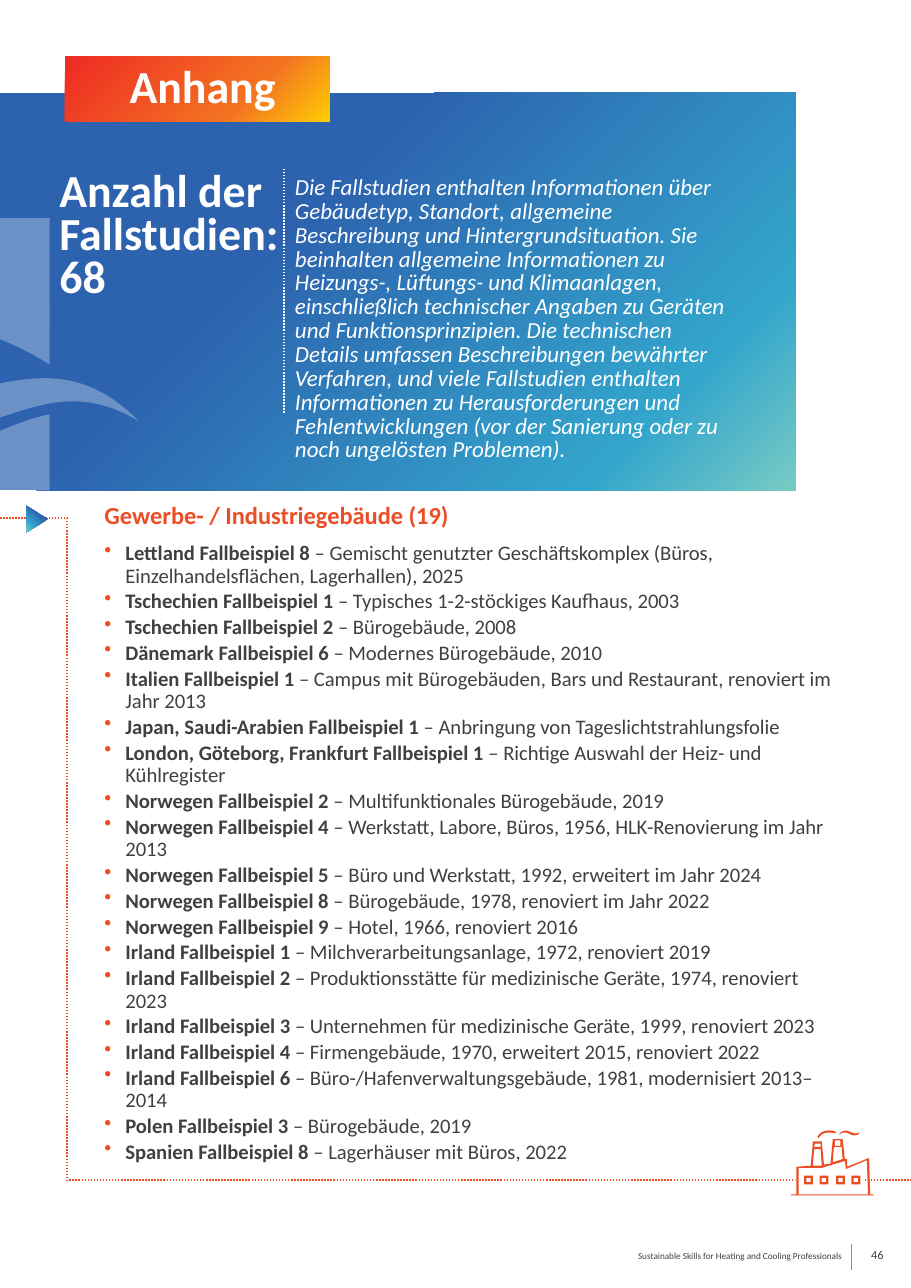
from lxml import etree
from pptx import Presentation
from pptx import util as u
from pptx.dml.color import RGBColor
from pptx.enum import dml, shapes, text
from pptx.oxml import ns, parse_xml

PX = 9144
WHITE = RGBColor(0xFF, 0xFF, 0xFF)
GREY = RGBColor(0x40, 0x40, 0x40)
RED = RGBColor(0xED, 0x4D, 0x24)
ORANGE = RGBColor(0xF3, 0x73, 0x21)
BLUES = [(35, RGBColor(0x2D, 0x62, 0xAE)), (82, RGBColor(0x33, 0xA5, 0xCC)),
         (100, RGBColor(0x77, 0xCB, 0xC4))]
ARROW_BLUES = [BLUES[0], (74, BLUES[1][1]), BLUES[2]]
FLAMES = [(3, RGBColor(0xEE, 0x2D, 0x24)), (68, ORANGE), (100, RGBColor(0xFF, 0xCD, 0x05))]

INTRO = ("Die Fallstudien enthalten Informationen über Gebäudetyp, Standort, allgemeine "
         "Beschreibung und Hintergrundsituation. Sie beinhalten allgemeine Informationen zu "
         "Heizungs-, Lüftungs- und Klimaanlagen, einschließlich technischer Angaben zu Geräten "
         "und Funktionsprinzipien. Die technischen Details umfassen Beschreibungen bewährter "
         "Verfahren, und viele Fallstudien enthalten Informationen zu Herausforderungen und "
         "Fehlentwicklungen (vor der Sanierung oder zu noch ungelösten Problemen).")
CASES = [
    ("Lettland", 8, "Gemischt genutzter Geschäftskomplex (Büros, Einzelhandelsflächen, Lagerhallen), 2025"),
    ("Tschechien", 1, "Typisches 1-2-stöckiges Kaufhaus, 2003"),
    ("Tschechien", 2, "Bürogebäude, 2008"),
    ("Dänemark", 6, "Modernes Bürogebäude, 2010"),
    ("Italien", 1, "Campus mit Bürogebäuden, Bars und Restaurant, renoviert im Jahr 2013"),
    ("Japan, Saudi-Arabien", 1, "Anbringung von Tageslichtstrahlungsfolie"),
    ("London, Göteborg, Frankfurt", 1, "Richtige Auswahl der Heiz- und Kühlregister"),
    ("Norwegen", 2, "Multifunktionales Bürogebäude, 2019"),
    ("Norwegen", 4, "Werkstatt, Labore, Büros, 1956, HLK-Renovierung im Jahr 2013"),
    ("Norwegen", 5, "Büro und Werkstatt, 1992, erweitert im Jahr 2024"),
    ("Norwegen", 8, "Bürogebäude, 1978, renoviert im Jahr 2022"),
    ("Norwegen", 9, "Hotel, 1966, renoviert 2016"),
    ("Irland", 1, "Milchverarbeitungsanlage, 1972, renoviert 2019"),
    ("Irland", 2, "Produktionsstätte für medizinische Geräte, 1974, renoviert 2023"),
    ("Irland", 3, "Unternehmen für medizinische Geräte, 1999, renoviert 2023"),
    ("Irland", 4, "Firmengebäude, 1970, erweitert 2015, renoviert 2022"),
    ("Irland", 6, "Büro-/Hafenverwaltungsgebäude, 1981, modernisiert 2013–2014"),
    ("Polen", 3, "Bürogebäude, 2019"),
    ("Spanien", 8, "Lagerhäuser mit Büros, 2022"),
]

ORNAMENTS = [
    [(0, 114), (45, 114), (45, 212), (44, 177, 30, 160, 0, 160)],
    [(0, 160), (30, 160, 44, 177, 45, 212), (45, 247), (31, 238, 16, 230, 0, 224)],
    [(0, 295), (42, 281, 77, 269, 126, 298), (83, 255, 44, 255, 0, 264)],
    [(0, 307), (12, 302, 27, 296, 45, 292), (45, 361), (0, 361)],
]
FACTORY = [
    [(0, 59), (0, 58), (5, 58), (5, 33), (18, 32), (20, 10), (28, 10), (30, 31), (36, 30),
     (38, 8), (47, 8), (49, 26), (51, 26), (51, 33), (71, 25), (72, 58), (75, 58), (75, 59)],
    [(7, 58), (7, 34), (28, 34), (48, 28), (49, 28), (50, 35), (69, 27), (70, 58)],
    [(40, 9), (45, 9), (45, 14), (40, 14)],
    [(39, 15), (46, 15), (47, 26), (38, 29)],
    [(22, 12), (27, 12), (27, 15), (21, 15)],
    [(21, 17), (27, 17), (28, 32), (20, 32)],
    [(25, 7), (28, 3, 30, 2, 35, 2), (38, 2, 40, 3, 41, 2), (41, 1, 38, 0, 35, 0),
     (30, 0, 26, 2, 24, 6)],
    [(44, 4), (46, 2, 49, 1, 53, 3), (56, 5, 59, 5, 62, 3), (62, 2),
     (59, 3, 57, 3, 53, 1), (49, -1, 46, 1, 44, 3)],
]


def fill_gradient(shape, stops):
    shape.fill.gradient()
    shape.fill.gradient_angle = 315
    stop_list = shape._element.spPr.find(ns.qn("a:gradFill")).find(ns.qn("a:gsLst"))
    stop_list.clear()
    for place, colour in stops:
        stop = etree.SubElement(stop_list, ns.qn("a:gs"), pos=str(place * 1000))
        etree.SubElement(stop, ns.qn("a:srgbClr"), val=str(colour))


def finish(shape, fill, alpha=None):
    shape.shadow.inherit = False
    shape.line.fill.background()
    if isinstance(fill, list):
        fill_gradient(shape, fill)
        return
    shape.fill.solid()
    shape.fill.fore_color.rgb = fill
    if alpha:
        colour = shape._element.spPr.find(ns.qn("a:solidFill"))[0]
        etree.SubElement(colour, ns.qn("a:alpha"), val=str(alpha * 1000))


def add_preset(page, kind, box, fill):
    shape = page.shapes.add_shape(kind, *(n * PX for n in box))
    finish(shape, fill)
    return shape


def flatten(path, steps=12):
    points = []
    for part in path:
        if len(part) == 2:
            points.append(part)
            continue
        x0, y0 = points[-1]
        x1, y1, x2, y2, x3, y3 = part
        for t in (n / steps for n in range(1, steps + 1)):
            a, b, c, d = (1 - t) ** 3, 3 * t * (1 - t) ** 2, 3 * t * t * (1 - t), t ** 3
            points.append((a * x0 + b * x1 + c * x2 + d * x3, a * y0 + b * y1 + c * y2 + d * y3))
    return points


def add_outline(page, origin, paths, fill, alpha=None):
    contours = [[(x * PX, y * PX) for x, y in flatten(path)] for path in paths]
    builder = page.shapes.build_freeform(*contours[0][0], scale=1.0)
    for index, contour in enumerate(contours):
        if index:
            builder.move_to(*contour[0])
        builder.add_line_segments(contour[1:], close=True)
    finish(builder.convert_to_shape(origin[0] * PX, origin[1] * PX), fill, alpha)


def add_rule(page, x1, y1, x2, y2, colour, width=1, dotted=True):
    rule = page.shapes.add_connector(
        shapes.MSO_CONNECTOR.STRAIGHT, *(n * PX for n in (x1, y1, x2, y2)))
    rule.line.color.rgb = colour
    rule.line.width = u.Pt(width)
    if dotted:
        rule.line.dash_style = dml.MSO_LINE.ROUND_DOT
    etree.SubElement(rule._element.spPr, ns.qn("a:effectLst"))


def style(span, size, colour, bold=False, italic=False):
    span.font.name = "Calibri"
    span.font.size = u.Pt(size)
    span.font.color.rgb = colour
    span.font.bold = bold
    span.font.italic = italic


def add_text(page, box, words, size, colour, align=text.PP_ALIGN.LEFT, spacing=None,
             anchor=text.MSO_ANCHOR.TOP, **look):
    frame = page.shapes.add_textbox(*(n * PX for n in box)).text_frame
    frame.word_wrap = True
    frame.vertical_anchor = anchor
    frame.text = words
    para = frame.paragraphs[0]
    para.alignment = align
    if spacing:
        para.line_spacing = u.Pt(spacing)
    for span in para.runs:
        style(span, size, colour, **look)
    return frame


def add_footer(page, box):
    x, y, width, height = box
    add_text(page, (x, y + 6, 532, 20), "Sustainable Skills for Heating and Cooling Professionals",
             6, GREY, text.PP_ALIGN.RIGHT)
    add_rule(page, x + 531, y + 29, x + 531, y + 5, ORANGE, 0.75, False)
    add_text(page, (x + 532, y, width - 532, height), "46", 8, GREY, text.PP_ALIGN.RIGHT,
             anchor=text.MSO_ANCHOR.MIDDLE)


def add_banner(page, box):
    x, y, width, height = box
    add_outline(page, (x, y), [[(0, 0), (width, 0), (width, height), (0, height)]], BLUES)
    for ornament in ORNAMENTS:
        add_outline(page, (x, y), [ornament], WHITE, 30)
    add_text(page, (x + 44, y + 69, 223, 178), "Anzahl der Fallstudien: 68", 30, WHITE,
             spacing=28, bold=True)
    add_preset(page, shapes.MSO_SHAPE.RECTANGLE, (x + 59, y - 33, 240, 59), FLAMES)
    add_text(page, (x + 59, y - 37, 250, 59), "Anhang", 30, WHITE, text.PP_ALIGN.CENTER, bold=True)
    add_text(page, (x + 258, y + 71, 423, 178), INTRO, 15, WHITE, spacing=15.6, italic=True)
    add_rule(page, x + 258, y + 69, x + 258, y + 292, WHITE)


def add_frame(page, box):
    x, y, width, height = box
    add_rule(page, x, y, x + 61, y, RED)
    add_rule(page, x + 61, y, x + 61, y + height, RED)
    arrow = add_preset(page, shapes.MSO_SHAPE.ISOSCELES_TRIANGLE, (x + 22, y - 9, 24, 20), ARROW_BLUES)
    arrow.rotation = 90
    add_rule(page, x + 63, y + height, x + width, y + height, RED)
    add_preset(page, shapes.MSO_SHAPE.RECTANGLE, (x + 722, y + height - 20, 63, 44), WHITE)


def add_cases(page, box):
    x, y, width, height = box
    add_text(page, (x, y, 474, 38), "Gewerbe- / Industriegebäude (19)", 16, RED, bold=True)
    frame = add_text(page, (x, y + 38, width, height - 38), "", 13.5, GREY)
    for index, (place, number, summary) in enumerate(CASES):
        para = frame.add_paragraph() if index else frame.paragraphs[0]
        props = para._p.get_or_add_pPr()
        props.set("marL", str(19 * PX))
        props.set("indent", str(-19 * PX))
        props.append(parse_xml(f'<a:buClr {ns.nsdecls("a")}><a:srgbClr val="{RED}"/></a:buClr>'))
        etree.SubElement(props, ns.qn("a:buChar"), char="•")
        para.line_spacing = u.Pt(14.8)
        para.space_after = u.Pt(2)
        for words, bold in ((f"{place} Fallbeispiel {number} ", True), (f"– {summary}", False)):
            span = para.add_run()
            span.text = words
            style(span, 13.5, GREY, bold)


def add_factory(page, box):
    windows = []
    for column in range(4):
        left = 12 + round(column * 14.4)
        for inset in (0, 2):
            near, far, top, bottom = left + inset, left + 8 - inset, 41 + inset, 49 - inset
            windows.append([(near, top), (far, top), (far, bottom), (near, bottom)])
    add_outline(page, box[:2], FACTORY + windows, RED)


def main():
    deck = Presentation()
    deck.slide_width, deck.slide_height = 827 * PX, 1169 * PX
    page = deck.slides.add_slide(deck.slide_layouts[6])
    add_footer(page, (242, 1124, 570, 30))
    add_banner(page, (0, 84, 722, 361))
    add_frame(page, (0, 470, 827, 601))
    add_cases(page, (85, 449, 684, 646))
    add_factory(page, (718, 1026, 76, 59))
    deck.save("out.pptx")


if __name__ == "__main__":
    main()
